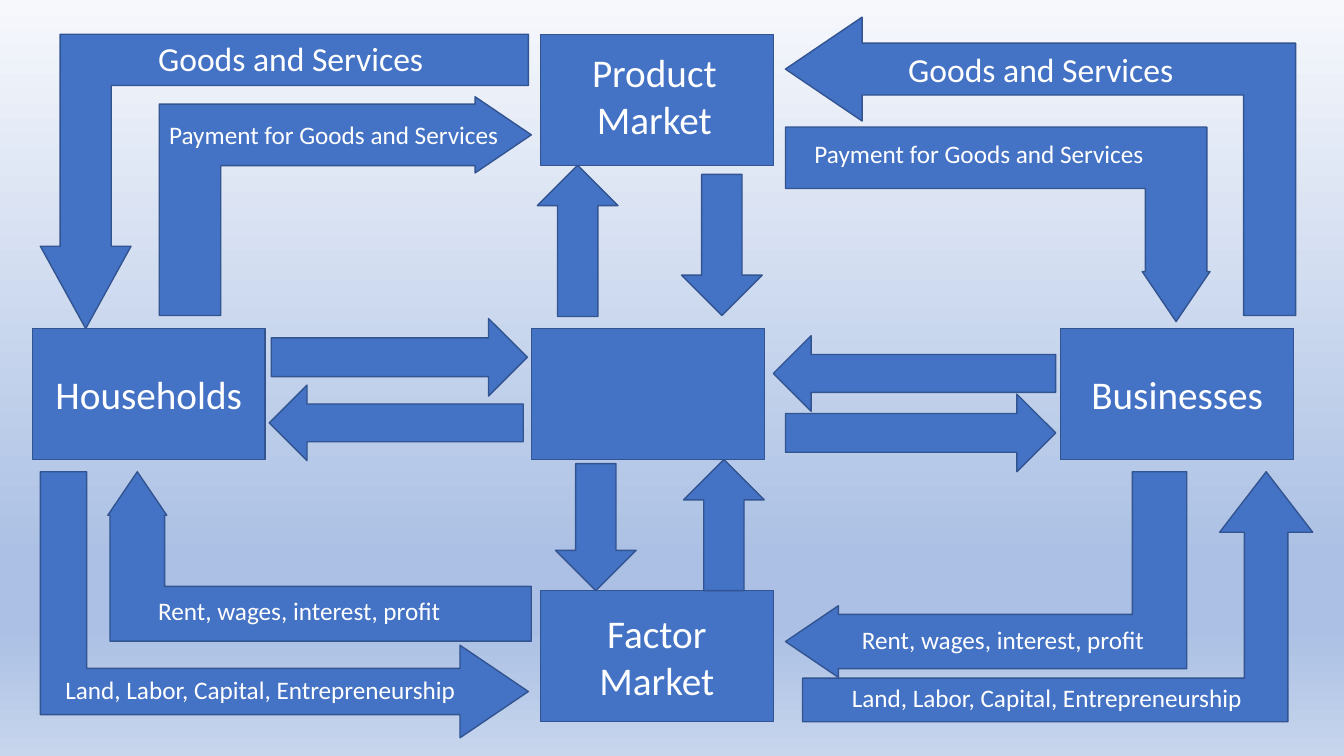
"""Draw the circular flow of households, businesses and markets."""
from copy import deepcopy
from pptx import Presentation
from pptx.dml.color import RGBColor
from pptx.enum.shapes import MSO_SHAPE as Kind
from pptx.enum.text import MSO_ANCHOR as Anchor, MSO_AUTO_SIZE as Auto, PP_ALIGN as Align
from pptx.util import Inches, Pt

BLUE, EDGE, WHITE, FONT = "4472C4", "325491", "FFFFFF", "Calibri"
SKY = [(0, "F6F8FC"), (0.74, "ABC0E4"), (0.83, "ABC0E4"), (1, "C7D5ED")]
BOX = (2.31, 1.3)

NODES = [
    ("Households", 0.32, 3.26),
    ("Businesses", 10.52, 3.26),
    ("", 5.36, 0.34),
    ("Factor Market", 5.36, 5.86),
    ("", 5.27, 3.26),
]

# left, top, width, height, turn, flip, adjustments
BENDS = [
    (7.96, 4.68, 5.06, 2.48, 0, False, (0.174, 0.186, 0.242)),
    (0.4, 0.34, 4.84, 2.92, 180, False, (0.174, 0.154, 0.28)),
    (1.5, 3.58, 2.64, 4.84, 90, False, (0.174, 0.174, 0.257)),
    (8.84, -0.88, 2.96, 5.06, 270, False, (0.174, 0.174, 0.257)),
    (8.76, 3.71, 2.04, 3.98, 270, True, (0.264, 0.174, 0.257)),
    (7.79, 1.26, 4.21, 1.93, 180, True, (0.316, 0.174, 0.257)),
    (1.07, 4.68, 4.2, 1.68, 0, True, (0.323, 0.174, 0.257)),
    (2.34, 0.2, 2.17, 3.69, 90, True, (0.281, 0.174, 0.257)),
]

ARROWS = [
    (Kind.UP_ARROW, 5.33, 1.64, 0.8, 1.5),
    (Kind.UP_ARROW, 6.78, 4.56, 0.8, 1.3),
    (Kind.DOWN_ARROW, 6.76, 1.73, 0.8, 1.4),
    (Kind.DOWN_ARROW, 5.51, 4.6, 0.8, 1.26),
    (Kind.RIGHT_ARROW, 7.79, 3.91, 2.68, 0.77),
    (Kind.RIGHT_ARROW, 2.69, 3.16, 2.54, 0.77),
    (Kind.LEFT_ARROW, 2.67, 3.82, 2.52, 0.75),
    (Kind.LEFT_ARROW, 7.67, 3.33, 2.8, 0.75),
]

# text, size, width, height, places
LABELS = [
    ("Land, Labor, Capital, Entrepreneurship", 18, 4.24, 0.4, [(0.55, 6.64), (8.35, 6.72)]),
    ("Rent, wages, interest, profit", 18, 3.03, 0.4, [(1.47, 5.86), (8.45, 6.14)]),
    ("Payment for Goods and Services", 18, 3.5, 0.4, [(1.58, 1.13), (7.98, 1.32)]),
    ("Goods and Services", 24, 2.86, 0.5, [(1.47, 0.33), (8.91, 0.44)]),
]


def color(code):
    return RGBColor.from_string(code)


def paint_sky(slide):
    fill = slide.background.fill
    fill.gradient()
    fill.gradient_angle = 270
    first = fill.gradient_stops[0]._gs
    for _ in SKY[2:]:
        first.addnext(deepcopy(first))
    for stop, (pos, code) in zip(fill.gradient_stops, SKY):
        stop.position = pos
        stop.color.rgb = color(code)


def write(shape, text, size=28, align=Align.CENTER, anchor=Anchor.MIDDLE, wrap=True):
    frame = shape.text_frame
    frame.word_wrap = wrap
    frame.vertical_anchor = anchor
    para = frame.paragraphs[0]
    para.alignment = align
    run = para.add_run()
    run.text = text
    run.font.name, run.font.size = FONT, Pt(size)
    run.font.color.rgb = color(WHITE)


def add_block(slide, kind, *rect):
    shape = slide.shapes.add_shape(kind, *map(Inches, rect))
    shape.shadow.inherit = False
    shape.fill.solid()
    shape.fill.fore_color.rgb = color(BLUE)
    shape.line.color.rgb = color(EDGE)
    shape.line.width = Pt(1)
    return shape


def add_label(slide, text, *rect, **style):
    box = slide.shapes.add_textbox(*map(Inches, rect))
    write(box, text, anchor=Anchor.TOP, **style)
    box.text_frame.auto_size = Auto.SHAPE_TO_FIT_TEXT


def main():
    deck = Presentation()
    deck.slide_width, deck.slide_height = Inches(13.33), Inches(7.5)
    slide = deck.slides.add_slide(deck.slide_layouts[6])
    paint_sky(slide)

    for text, left, top in NODES:
        node = add_block(slide, Kind.RECTANGLE, left, top, *BOX)
        if text:
            write(node, text)

    for *rect, turn, flip, adjust in BENDS:
        bend = add_block(slide, Kind.BENT_UP_ARROW, *rect)
        bend.rotation = turn
        if flip:
            bend._element.spPr.xfrm.set("flipH", "1")
        for i, value in enumerate(adjust):
            bend.adjustments[i] = value

    for arrow in ARROWS:
        add_block(slide, *arrow)

    for text, size, width, height, places in LABELS:
        for left, top in places:
            add_label(slide, text, left, top, width, height,
                      size=size, align=Align.LEFT, wrap=False)
    add_label(slide, "Product Market", 5.23, 0.43, 2.52, 1.04)

    deck.save("out.pptx")


if __name__ == "__main__":
    main()
